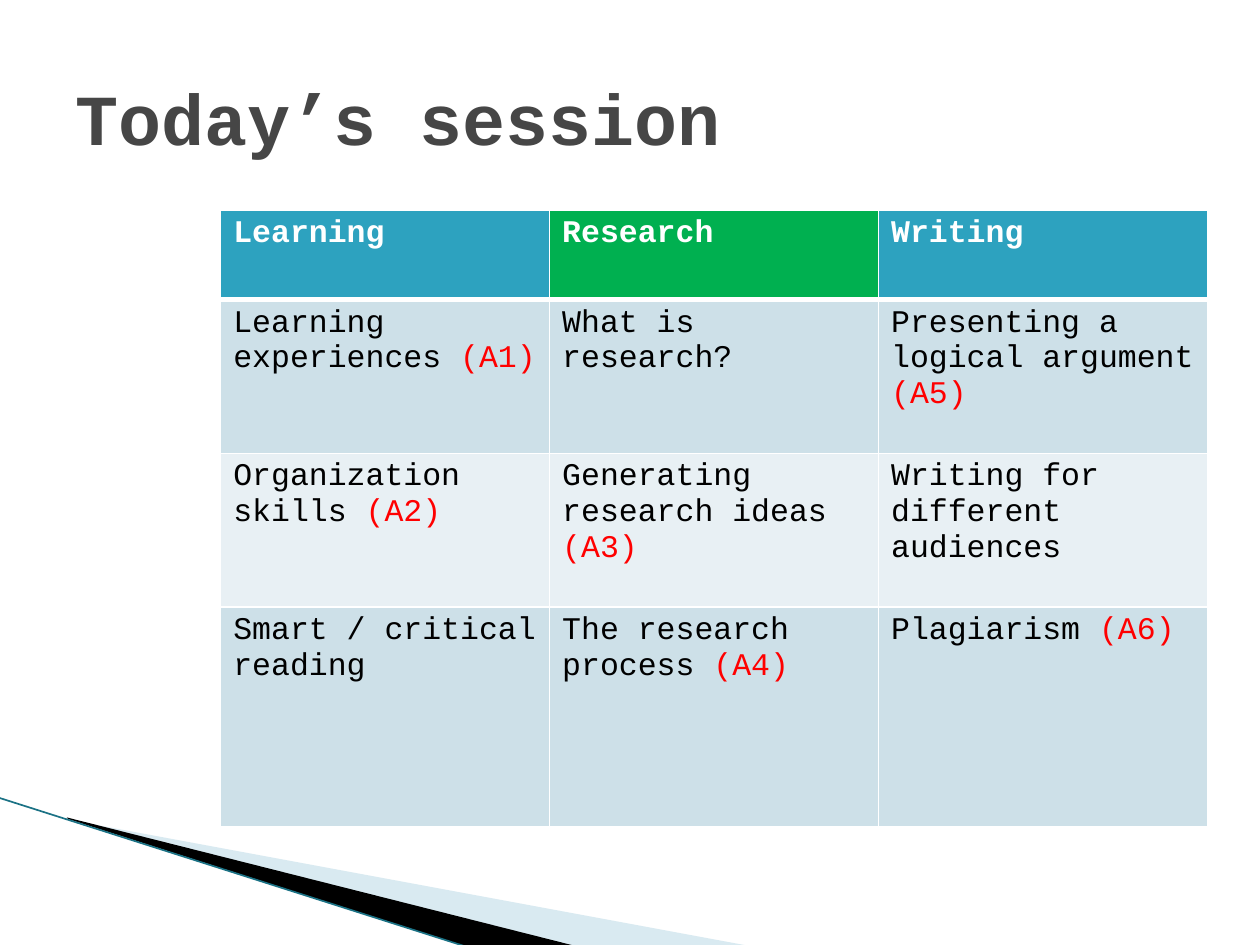
from lxml import etree
from pptx import Presentation
from pptx.dml.color import RGBColor
from pptx.enum.shapes import MSO_CONNECTOR
from pptx.enum.text import MSO_ANCHOR
from pptx.oxml import parse_xml
from pptx.oxml.ns import nsdecls, qn
from pptx.util import Cm, Pt

STRAIGHT = MSO_CONNECTOR.STRAIGHT
MIDDLE = MSO_ANCHOR.MIDDLE
FONT = "Courier New"
RED = "FF0000"


def tint(text):
    return RGBColor.from_string(text)


def add_run(para, text, size, color, bold=False):
    run = para.add_run()
    run.text = text
    font = run.font
    font.name = FONT
    font.size = Pt(size)
    font.bold = bold
    font.color.rgb = tint(color)


deck = Presentation()
deck.slide_width = Cm(25.4)
deck.slide_height = Cm(19.05)
slide = deck.slides.add_slide(deck.slide_layouts[6])
shapes = slide.shapes

wedges = [
    ("A0CBDC", 40, [(1.4, 16.53), (15.11, 19.07), (11.58, 19.07), (1.4, 16.51)]),
    ("000000", 100, [(1.35, 16.48), (11.6, 19.07), (9.45, 19.1), (1.37, 16.51)]),
]
for color, alpha, spots in wedges:
    points = [(Cm(x), Cm(y)) for x, y in spots]
    pen = shapes.build_freeform(*points[0], scale=1.0)
    pen.add_line_segments(points[1:], close=True)
    wedge = pen.convert_to_shape()
    wedge.shadow.inherit = False
    wedge.fill.solid()
    wedge.fill.fore_color.rgb = tint(color)
    wedge.line.fill.background()
    if alpha < 100:
        paint = wedge.fill._xPr.find(qn("a:solidFill"))[0]
        etree.SubElement(paint, qn("a:alpha")).set("val", str(alpha * 1000))

edge = shapes.add_connector(STRAIGHT, Cm(-0.03), Cm(16.08), Cm(9.45), Cm(19.1))
edge.line.color.rgb = tint("1B7285")
edge.line.width = Pt(0.95)
etree.SubElement(edge._element.spPr, qn("a:effectLst"))

title = shapes.add_textbox(Cm(1.27), Cm(0.76), Cm(22.86), Cm(3.18))
frame = title.text_frame
frame.word_wrap = True
frame.vertical_anchor = MIDDLE
add_run(frame.paragraphs[0], "Today’s session", 41, "464646", True)

heads = [("Learning", "2DA2BF"), ("Research", "00B050"), ("Writing", "2DA2BF")]
topics = [
    [("Learning experiences ", "(A1)"), ("What is research?", ""),
     ("Presenting a logical argument ", "(A5)")],
    [("Organization skills ", "(A2)"), ("Generating research ideas ", "(A3)"),
     ("Writing for different audiences", "")],
    [("Smart / critical reading", ""), ("The research process ", "(A4)"),
     ("Plagiarism ", "(A6)")],
]
bands = ["CDE0E8", "E8F0F4"]
highs = [1.8, 3.1, 3.1, 4.42]

grid = shapes.add_table(4, 3, Cm(4.45), Cm(4.24), Cm(19.89), Cm(sum(highs))).table
for col in grid.columns:
    col.width = Cm(6.63)
for row, high in zip(grid.rows, highs):
    row.height = Cm(high)

for r in range(4):
    for c in range(3):
        cell = grid.cell(r, c)
        props = cell._tc.get_or_add_tcPr()
        thick = {"B": 3} if r == 0 else {"T": 3} if r == 1 else {}
        for side in "LRTB":
            width = Pt(thick.get(side, 1))
            props.append(parse_xml(
                f'<a:ln{side} {nsdecls("a")} w="{width}"><a:solidFill>'
                f'<a:srgbClr val="FFFFFF"/></a:solidFill></a:ln{side}>'))
        cell.fill.solid()
        para = cell.text_frame.paragraphs[0]
        if r == 0:
            text, color = heads[c]
            cell.fill.fore_color.rgb = tint(color)
            add_run(para, text, 18, "FFFFFF", True)
        else:
            text, code = topics[r - 1][c]
            cell.fill.fore_color.rgb = tint(bands[(r - 1) % 2])
            add_run(para, text, 18, "000000")
            if code:
                add_run(para, code, 18, RED)

deck.save("out.pptx")
